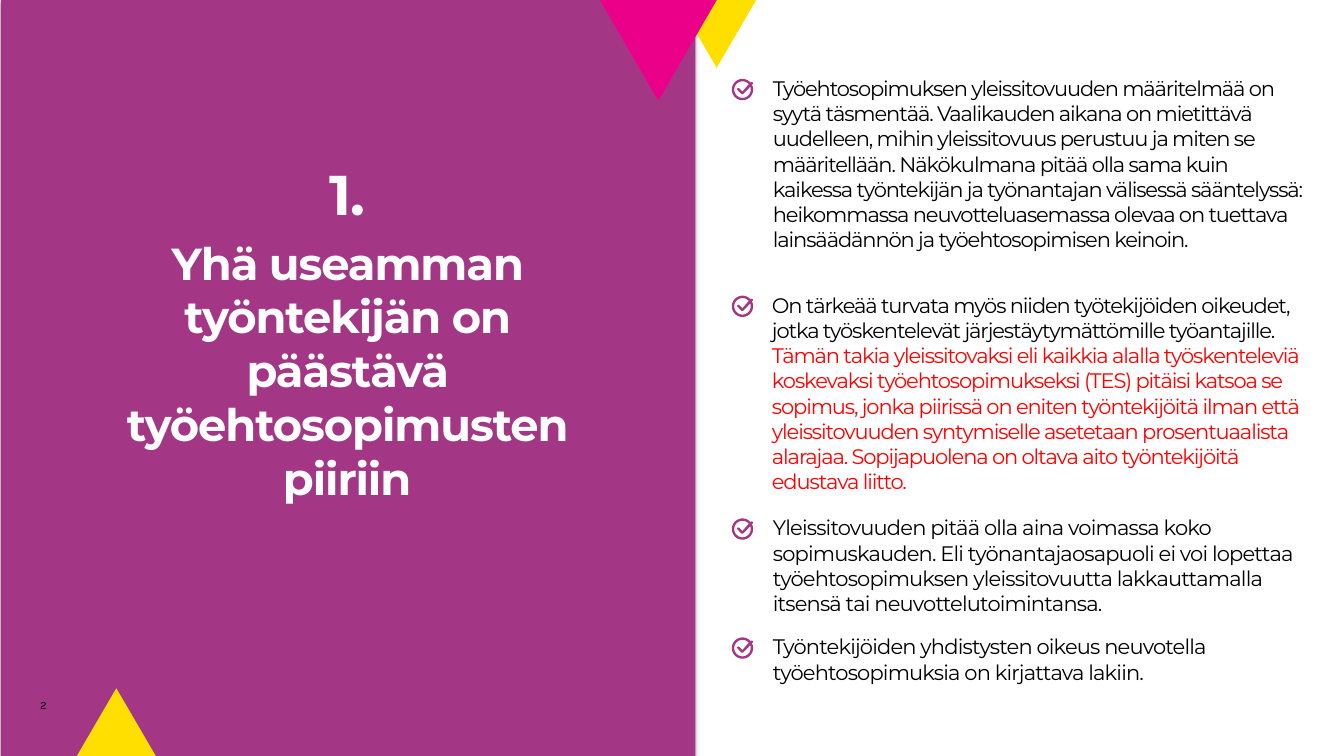
from dataclasses import dataclass
from math import cos, radians, sin

from lxml.etree import SubElement
from pptx import Presentation
from pptx.dml.color import RGBColor
from pptx.enum.shapes import MSO_SHAPE as Shape
from pptx.enum.text import MSO_ANCHOR as Anchor, PP_ALIGN as Align
from pptx.oxml.ns import qn
from pptx.util import Pt


@dataclass(frozen=True)
class Theme:
    purple: str = "A33786"
    yellow: str = "FFDF00"
    pink: str = "EB0089"
    white: str = "FFFFFF"
    black: str = "000000"
    red: str = "FF0000"
    font: str = "Montserrat"
    number_font: str = "Karla"
    numeral_size: float = 40
    title_size: float = 32
    body_size: float = 15
    number_size: float = 8


def format_run(paragraph, text, *, size, color, font, bold=False, tracking=0):
    """Add a run; tracking is the letter spacing in points."""
    run = paragraph.add_run()
    run.text = text
    run.font.size = Pt(size)
    run.font.name = font
    run.font.bold = bold
    run.font.color.rgb = RGBColor.from_string(color)
    if tracking:
        run.font._element.set("spc", str(round(tracking * 100)))


class SlideBuilder:
    def __init__(self, slide, theme):
        self.slide = slide
        self.theme = theme

    def paint(self, shape, color, line_width=0):
        shape.shadow.inherit = False
        shape.fill.solid()
        shape.fill.fore_color.rgb = RGBColor.from_string(color)
        if line_width:
            shape.line.color.rgb = RGBColor.from_string(color)
            shape.line.width = Pt(line_width)
        else:
            shape.line.fill.background()

    def preset(self, kind, left, top, width, height, color, rotation=0):
        shape = self.slide.shapes.add_shape(kind, Pt(left), Pt(top), Pt(width), Pt(height))
        shape.rotation = rotation
        self.paint(shape, color)
        return shape

    def drop_shadow(self, shape, blur, distance, opacity):
        effects = shape._element.spPr.find(qn("a:effectLst"))
        shadow = SubElement(effects, qn("a:outerShdw"), blurRad=str(Pt(blur)),
                            dist=str(Pt(distance)), dir="5400000", rotWithShape="0")
        color = SubElement(shadow, qn("a:srgbClr"), val=self.theme.black)
        SubElement(color, qn("a:alpha"), val=str(opacity * 1000))

    def text(self, left, top, width, height, paragraphs, align=Align.LEFT, space_before=0):
        """Each paragraph is a list of (text, format) runs."""
        box = self.slide.shapes.add_textbox(Pt(left), Pt(top), Pt(width), Pt(height))
        frame = box.text_frame
        frame.word_wrap = True
        frame.vertical_anchor = Anchor.TOP
        for index, runs in enumerate(paragraphs):
            paragraph = frame.add_paragraph() if index else frame.paragraphs[0]
            paragraph.alignment = align
            if index:
                paragraph.space_before = Pt(space_before)
            for text, style in runs:
                format_run(paragraph, text, **style)

    def check_icon(self, center_x, center_y):
        """Draw an open ring with a tick that passes through its gap."""
        def place(points):
            return [(Pt(center_x + x), Pt(center_y + y)) for x, y in points]

        def arc(radius, angles):
            return [(radius * cos(radians(a)), radius * sin(radians(a))) for a in angles]

        angles = range(-24, 321, 8)
        ring = place(arc(7.1, angles) + arc(6.4, reversed(angles)))
        tick = place([(0, 2.1), (-2.8, -0.7), (-3.4, -0.3), (-0.5, 2.8), (0.2, 2.8),
                      (5.7, -2.9), (7.1, -4.5), (6.5, -5), (5, -3.6)])
        builder = self.slide.shapes.build_freeform(*ring[0])
        builder.add_line_segments(ring[1:], close=True)
        builder.move_to(*tick[0])
        builder.add_line_segments(tick[1:], close=True)
        self.paint(builder.convert_to_shape(), self.theme.purple, line_width=1)


def main():
    presentation = Presentation()
    presentation.slide_width, presentation.slide_height = Pt(960), Pt(540)
    theme = Theme()
    slide = presentation.slides.add_slide(presentation.slide_layouts[6])
    builder = SlideBuilder(slide, theme)

    panel = builder.preset(Shape.RECTANGLE, 0.6, 0, 496.2, 540, theme.purple)
    builder.drop_shadow(panel, blur=3.1, distance=1.8, opacity=35)
    for left, top, width, height, color, rotation in (
        (54.9, 491.6, 56.4, 48.4, theme.yellow, 0),
        (483.7, 0, 56.4, 48.4, theme.yellow, 180),
        (428.5, 0, 83.5, 72, theme.pink, 180),
    ):
        builder.preset(Shape.ISOSCELES_TRIANGLE, left, top, width, height, color, rotation)

    title = dict(color=theme.white, font=theme.font, bold=True, tracking=-0.8)
    builder.text(59, 110.2, 378, 264.2, [
        [("1.", dict(title, size=theme.numeral_size))],
        [("Yhä useamman työntekijän on päästävä työehtosopimusten piiriin",
          dict(title, size=theme.title_size))],
    ], align=Align.CENTER, space_before=6.4)
    builder.text(21.6, 495.4, 31.7, 26.6, [[("2", dict(
        size=theme.number_size, color=theme.black, font=theme.number_font))]])

    tight = dict(size=theme.body_size, color=theme.black, font=theme.font, tracking=-0.8)
    loose = dict(tight, tracking=-0.6)
    demands = (
        (545, 50.4, 146.2, [(
            "Työehtosopimuksen yleissitovuuden määritelmää on syytä täsmentää. "
            "Vaalikauden aikana on mietittävä uudelleen, mihin yleissitovuus perustuu "
            "ja miten se määritellään. Näkökulmana pitää olla sama kuin kaikessa "
            "työntekijän ja työnantajan välisessä sääntelyssä: heikommassa "
            "neuvotteluasemassa olevaa on tuettava lainsäädännön ja "
            "työehtosopimisen keinoin.", tight)]),
        (544.3, 205.2, 150.5, [(
            "On tärkeää turvata myös niiden työtekijöiden oikeudet, jotka "
            "työskentelevät järjestäytymättömille työantajille. ", tight), (
            "Tämän takia yleissitovaksi eli kaikkia alalla työskenteleviä koskevaksi "
            "työehtosopimukseksi (TES) pitäisi katsoa se sopimus, jonka piirissä on "
            "eniten työntekijöitä ilman että yleissitovuuden syntymiselle asetetaan "
            "prosentuaalista alarajaa. Sopijapuolena on oltava aito työntekijöitä "
            "edustava liitto.", dict(tight, color=theme.red))]),
        (545, 364.3, 77, [(
            "Yleissitovuuden pitää olla aina voimassa koko sopimuskauden. Eli "
            "työnantajaosapuoli ei voi lopettaa työehtosopimuksen yleissitovuutta "
            "lakkauttamalla itsensä tai neuvottelutoimintansa.", loose)]),
        (545, 449.3, 43.9, [(
            "Työntekijöiden yhdistysten oikeus neuvotella työehtosopimuksia on "
            "kirjattava lakiin.", loose)]),
    )
    for left, top, height, runs in demands:
        builder.text(left, top, 397.4, height, [runs])
        builder.check_icon(530.4, top + 13.6)

    presentation.save("out.pptx")


if __name__ == "__main__":
    main()
